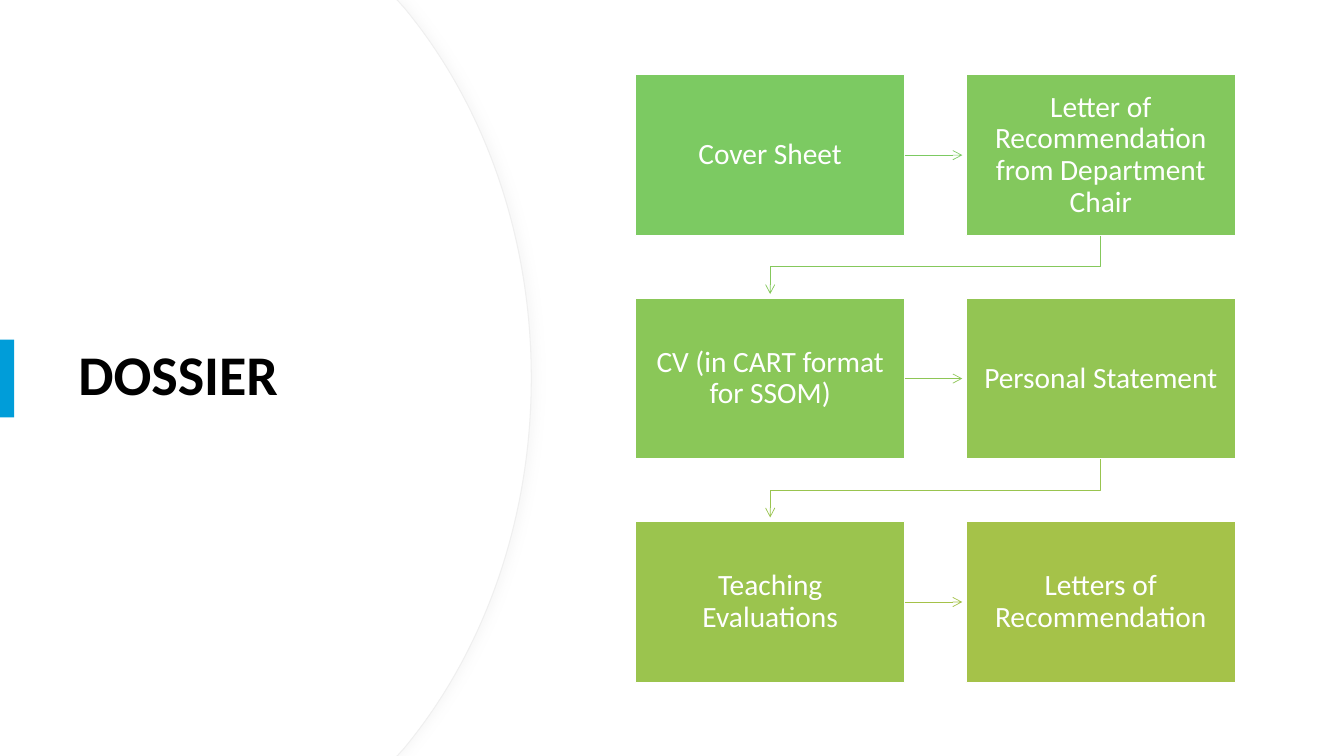
from pptx import Presentation
from pptx.dml.color import RGBColor
from pptx.enum.shapes import MSO_CONNECTOR, MSO_SHAPE
from pptx.enum.text import MSO_ANCHOR, MSO_AUTO_SIZE, PP_ALIGN
from pptx.oxml import parse_xml
from pptx.oxml.ns import nsdecls, qn
from pptx.util import Cm, Pt

# Content: each step is (text, box colour); each arrow colour leads to the next step
HEADING = "DOSSIER"
STEPS = [
    ("Cover Sheet", "7CCA62"),
    ("Letter of Recommendation from Department Chair", "83C85D"),
    ("CV (in CART format for SSOM)", "8AC758"),
    ("Personal Statement", "93C553"),
    ("Teaching Evaluations", "9BC44E"),
    ("Letters of Recommendation", "A5C249"),
]
ARROW_COLOURS = ["7CCA62", "85C85C", "8EC656", "99C44F", "A5C249"]

THEME = {
    "font": "Calibri", "heading_size": 40, "step_size": 21,
    "heading": "000000", "step_text": "FFFFFF", "panel": "FFFFFF",
    "panel_edge": "EFEFEF", "panel_shadow": "D9D9D9",
    "accent": "009DD9", "box_edge": "FFFFFF",
}

# Geometry in centimetres
SLIDE_W, SLIDE_H = 33.87, 19.05
GRID_LEFT, GRID_TOP, COLUMNS = 16.02, 1.88, 2
BOX_W, BOX_H = 6.78, 4.06
PITCH_X, PITCH_Y = 8.33, 5.63
TIP_GAP = 0.1
PANEL_CORNER, PANEL_BEND, PANEL_TIP = (10.01, 0), (10.19, 0.2), (13.39, SLIDE_H / 2)
PANEL_HANDLES = [(12.17, 2.59), (13.39, 5.89)]


def paint(shape, fill, edge=None, width=1):
    shape.shadow.inherit = False
    if fill:
        shape.fill.solid()
        shape.fill.fore_color.rgb = RGBColor.from_string(fill)
    else:
        shape.fill.background()
    if edge:
        shape.line.color.rgb = RGBColor.from_string(edge)
        shape.line.width = Pt(width)
    else:
        shape.line.fill.background()


def write(frame, text, size, colour, align, bold, margins=None):
    frame_format = {"word_wrap": True, "auto_size": MSO_AUTO_SIZE.NONE,
                    "vertical_anchor": MSO_ANCHOR.MIDDLE, **(margins or {})}
    for name, value in frame_format.items():
        setattr(frame, name, value)
    paragraph = frame.paragraphs[0]
    paragraph.alignment, paragraph.line_spacing = align, 0.9
    run = paragraph.add_run()
    run.text = text
    font_format = {"name": THEME["font"], "size": Pt(size), "bold": bold}
    for name, value in font_format.items():
        setattr(run.font, name, value)
    run.font.color.rgb = RGBColor.from_string(colour)


def outline(shapes, points, close):
    start, *rest = [(Cm(x), Cm(y)) for x, y in points]
    builder = shapes.build_freeform(*start, scale=1.0)
    builder.add_line_segments(rest, close=close)
    return builder.convert_to_shape()


def add_arrowhead(arrow):
    arrow.line._get_or_add_ln().append(
        parse_xml(f'<a:tailEnd {nsdecls("a")} type="arrow"/>'))


def mirror(points):
    return [(x, SLIDE_H - y) for x, y in reversed(points)]


def arc_panel(shapes, shift):
    """White panel whose right side is a symmetric pair of Bezier curves."""
    corner, bend, tip, *handles = [
        (x - shift, y) for x, y in (PANEL_CORNER, PANEL_BEND, PANEL_TIP, *PANEL_HANDLES)]
    low_bend, low_corner = mirror([corner, bend])
    panel = outline(shapes, [(0, 0), corner, bend, tip, low_bend, low_corner, (0, SLIDE_H)], True)

    # Bend the two straight segments that meet at the tip
    segments = panel._element.findall(".//" + qn("a:lnTo"))
    for segment, curve_handles in zip(segments[2:4], (handles, mirror(handles))):
        curve = parse_xml(f'<a:cubicBezTo {nsdecls("a")}>' + "".join(
            f'<a:pt x="{Cm(x)}" y="{Cm(y)}"/>' for x, y in curve_handles) + "</a:cubicBezTo>")
        curve.append(segment[0])
        segment.getparent().replace(segment, curve)
    return panel


def build_left_side(slide):
    # Curved panel with a soft shadow, then a plain one on top
    shadowed = arc_panel(slide.shapes, 0)
    paint(shadowed, THEME["panel"], THEME["panel_edge"], 0.75)
    shadowed._element.spPr.find(qn("a:effectLst")).append(parse_xml(
        f'<a:outerShdw {nsdecls("a")} blurRad="{Pt(7)}" dist="{Pt(3)}" dir="0">'
        f'<a:srgbClr val="{THEME["panel_shadow"]}"><a:alpha val="20000"/></a:srgbClr>'
        '</a:outerShdw>'))
    paint(arc_panel(slide.shapes, 0.03), THEME["panel"])

    # Title, brought in front of the panels
    heading = slide.shapes.title
    place = {"left": 1.72, "top": 3.23, "width": 10.01, "height": 12.57}
    for name, value in place.items():
        setattr(heading, name, Cm(value))
    write(heading.text_frame, HEADING, THEME["heading_size"], THEME["heading"],
          PP_ALIGN.LEFT, True)
    slide.shapes._spTree.append(heading._element)

    # Accent bar
    accent = slide.shapes.add_shape(MSO_SHAPE.RECTANGLE, 0, Cm(8.56), Cm(0.36), Cm(1.96))
    paint(accent, THEME["accent"])


def build_flow(slide):
    # Step boxes
    margins = {"margin_left": Cm(0.33), "margin_right": Cm(0.33),
               "margin_top": Cm(0.35), "margin_bottom": Cm(0.35)}
    corners = [(GRID_LEFT + i % COLUMNS * PITCH_X, GRID_TOP + i // COLUMNS * PITCH_Y)
               for i in range(len(STEPS))]
    boxes = []
    for (text, colour), (x, y) in zip(STEPS, corners):
        box = slide.shapes.add_shape(MSO_SHAPE.RECTANGLE, Cm(x), Cm(y), Cm(BOX_W), Cm(BOX_H))
        paint(box, colour, THEME["box_edge"])
        write(box.text_frame, text, THEME["step_size"], THEME["step_text"],
              PP_ALIGN.CENTER, False, margins)
        boxes.append(box)

    # Arrows: straight along a row, bent from a row's end to the next row
    for i, colour in enumerate(ARROW_COLOURS):
        (x, y), (next_x, next_y) = corners[i], corners[i + 1]
        if y == next_y:
            middle = boxes[i].top + boxes[i].height // 2
            arrow = slide.shapes.add_connector(
                MSO_CONNECTOR.STRAIGHT, Cm(x + BOX_W), middle, Cm(next_x - TIP_GAP), middle)
            arrow.begin_connect(boxes[i], 3)
            arrow.line.color.rgb = RGBColor.from_string(colour)
            arrow.line.width = Pt(0.5)
            arrow._element.spPr.append(parse_xml(f'<a:effectLst {nsdecls("a")}/>'))
        else:
            start_x, end_x = x + BOX_W / 2, next_x + BOX_W / 2
            bottom = y + BOX_H
            turn = (bottom + next_y) / 2
            arrow = outline(slide.shapes, [(start_x, bottom), (start_x, turn), (end_x, turn),
                                           (end_x, next_y - TIP_GAP)], False)
            paint(arrow, None, colour, 0.5)
        add_arrowhead(arrow)


def main():
    deck = Presentation()
    deck.slide_width, deck.slide_height = Cm(SLIDE_W), Cm(SLIDE_H)
    slide = deck.slides.add_slide(deck.slide_layouts[5])
    build_left_side(slide)
    build_flow(slide)
    deck.save("out.pptx")


if __name__ == "__main__":
    main()
